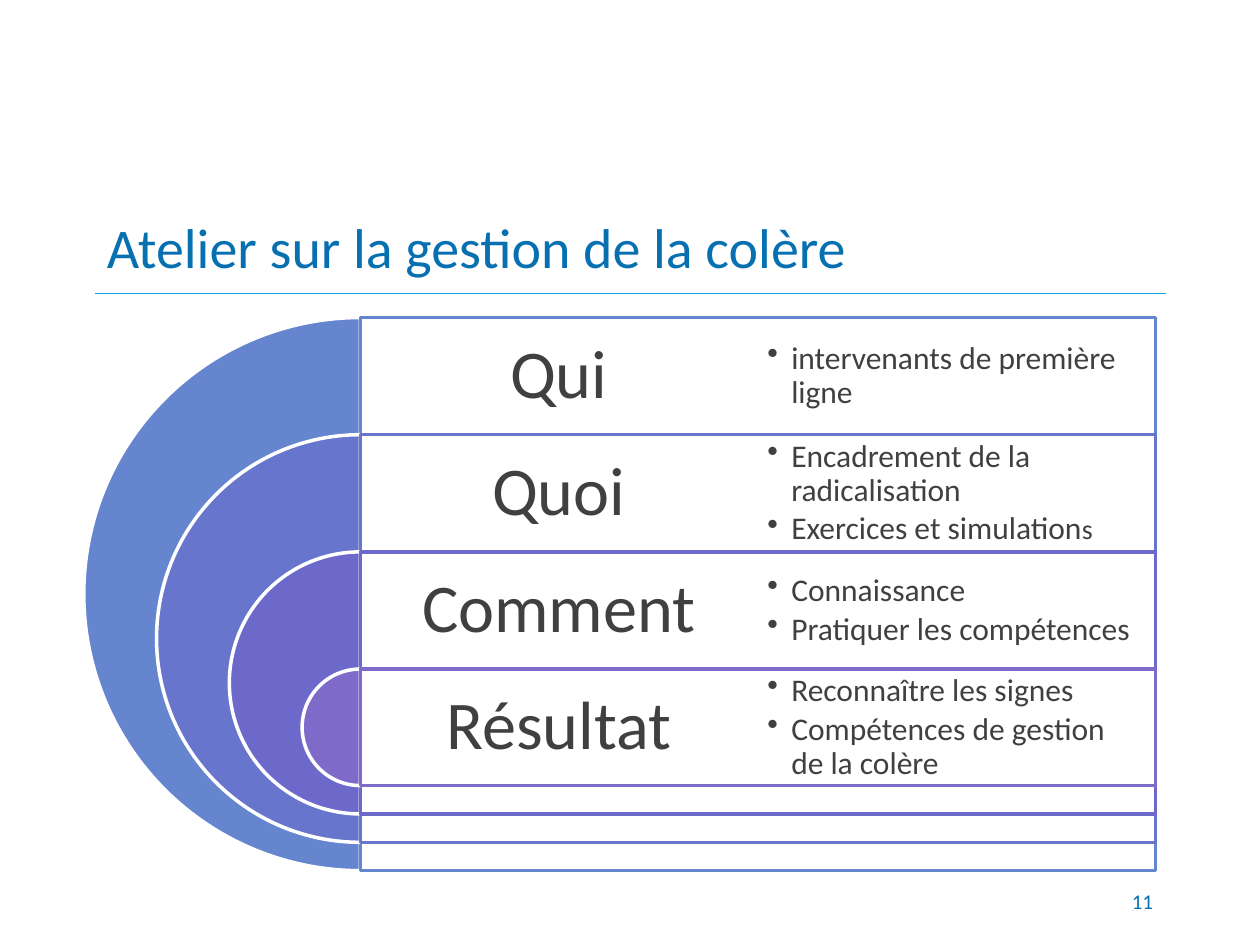
from lxml.etree import SubElement
from pptx import Presentation
from pptx.dml.color import RGBColor
from pptx.enum.shapes import MSO_CONNECTOR, MSO_SHAPE
from pptx.enum.text import MSO_ANCHOR, PP_ALIGN
from pptx.oxml.ns import qn
from pptx.util import Inches, Pt

WHITE = RGBColor(0xFF, 0xFF, 0xFF)
DARK = RGBColor(0x40, 0x40, 0x40)
BLUE = RGBColor(0x07, 0x70, 0xB1)
SKY = RGBColor(0x0B, 0xA7, 0xDF)

# Heading, ring colour, bullets (each bullet is a list of (text, size) runs)
LEVELS = [
    ("Qui", RGBColor(0x65, 0x85, 0xCF), [[("intervenants de première ligne", 18)]]),
    ("Quoi", RGBColor(0x67, 0x75, 0xCD), [
        [("Encadrement de la radicalisation", 18)],
        [("Exercices et simulation", 18), ("s", 16)]]),
    ("Comment", RGBColor(0x6C, 0x69, 0xCB), [
        [("Connaissance", 18)], [("Pratiquer les compétences", 18)]]),
    ("Résultat", RGBColor(0x7E, 0x6B, 0xC9), [
        [("Reconnaître les signes", 18)],
        [("Compétences de gestion de la colère", 18)]]),
]

# Nested diagram geometry, in inches
TOP, ROW = 2.52, 0.93
CENTER, PANEL_WIDTH = 2.86, 6.31
OUTER, SHRINK = 4.39, 1.155
DETAIL_LEFT, DETAIL_WIDTH = 6.01, 3.15
PAD = 0.16


class SlideBuilder:
    font = "Calibri"

    def __init__(self, slide):
        self.slide = slide

    def style(self, paragraph, size, color, align=PP_ALIGN.LEFT):
        paragraph.alignment = align
        paragraph.font.name = self.font
        paragraph.font.size = Pt(size)
        paragraph.font.color.rgb = color

    def frame(self, shape, insets):
        frame = shape.text_frame
        frame.word_wrap = True
        frame.vertical_anchor = MSO_ANCHOR.MIDDLE
        (frame.margin_left, frame.margin_top,
         frame.margin_right, frame.margin_bottom) = map(Inches, insets)
        return frame

    def box(self, left, top, width, height, insets):
        shape = self.slide.shapes.add_textbox(
            Inches(left), Inches(top), Inches(width), Inches(height))
        return self.frame(shape, insets)

    def text(self, left, top, width, height, words, size, align=PP_ALIGN.LEFT):
        frame = self.box(left, top, width, height, (0.1, 0.05, 0.1, 0.05))
        frame.text = words
        self.style(frame.paragraphs[0], size, BLUE, align)

    def rule(self, left, right, y):
        line = self.slide.shapes.add_connector(
            MSO_CONNECTOR.STRAIGHT, Inches(left), Inches(y), Inches(right), Inches(y))
        line.line.color.rgb = SKY
        line.line.width = Pt(0.75)
        SubElement(line._element.spPr, qn("a:effectLst"))

    def shape(self, kind, left, top, width, height, fill, outline):
        shape = self.slide.shapes.add_shape(
            kind, Inches(left), Inches(top), Inches(width), Inches(height))
        shape.shadow.inherit = False
        shape.fill.solid()
        shape.fill.fore_color.rgb = fill
        shape.line.color.rgb = outline
        shape.line.width = Pt(2)
        return shape

    def half_disc(self, top, diameter, color):
        disc = self.shape(MSO_SHAPE.PIE, CENTER - diameter / 2, top,
                          diameter, diameter, color, WHITE)
        # Angles of 90 and 270 degrees keep the left half
        disc.adjustments[0] = 54
        disc.adjustments[1] = 162

    def panel(self, top, height, color, heading):
        panel = self.shape(MSO_SHAPE.RECTANGLE, CENTER, top,
                           PANEL_WIDTH, height, WHITE, color)
        fill_color = panel._element.spPr.find(qn("a:solidFill"))[0]
        SubElement(fill_color, qn("a:alpha"), val="90000")
        frame = self.frame(panel, (PAD, PAD, 3.32, height - ROW + PAD))
        frame.text = heading
        paragraph = frame.paragraphs[0]
        paragraph.line_spacing = 0.9
        paragraph.space_after = Pt(13.7)
        self.style(paragraph, 39, DARK, PP_ALIGN.CENTER)

    def bullets(self, top, items):
        frame = self.box(DETAIL_LEFT, top, DETAIL_WIDTH, ROW, (0.08,) * 4)
        for index, runs in enumerate(items):
            paragraph = frame.add_paragraph() if index else frame.paragraphs[0]
            paragraph.level = 1
            paragraph.line_spacing = 0.9
            paragraph.space_after = Pt(2.7)
            properties = paragraph._p.get_or_add_pPr()
            properties.set("marL", str(Inches(0.19)))
            properties.set("indent", str(Inches(-0.19)))
            bullet_color = SubElement(properties, qn("a:buClr"))
            SubElement(bullet_color, qn("a:srgbClr"), val=str(DARK))
            SubElement(properties, qn("a:buChar"), char="•")
            self.style(paragraph, runs[0][1], DARK)
            for words, size in runs:
                run = paragraph.add_run()
                run.text = words
                if size != runs[0][1]:
                    run.font.size = Pt(size)


def main():
    deck = Presentation()
    deck.slide_width, deck.slide_height = Inches(10), Inches(7.5)
    builder = SlideBuilder(deck.slides.add_slide(deck.slide_layouts[6]))

    # Title and rule
    builder.rule(0.75, 9.25, 2.33)
    builder.text(0.75, 1.58, 8.5, 0.75, "Atelier sur la gestion de la colère", 32)

    # Nested half discs with their panels
    for index, (heading, color, _) in enumerate(LEVELS):
        top, diameter = TOP + index * ROW, OUTER - index * SHRINK
        builder.half_disc(top, diameter, color)
        builder.panel(top, diameter, color, heading)

    # Details beside each heading
    for index, (_, _, items) in enumerate(LEVELS):
        builder.bullets(TOP + index * ROW, items)

    # Page number
    builder.text(7.17, 6.95, 2.08, 0.4, "11", 12, PP_ALIGN.RIGHT)

    deck.save("out.pptx")


if __name__ == "__main__":
    main()
